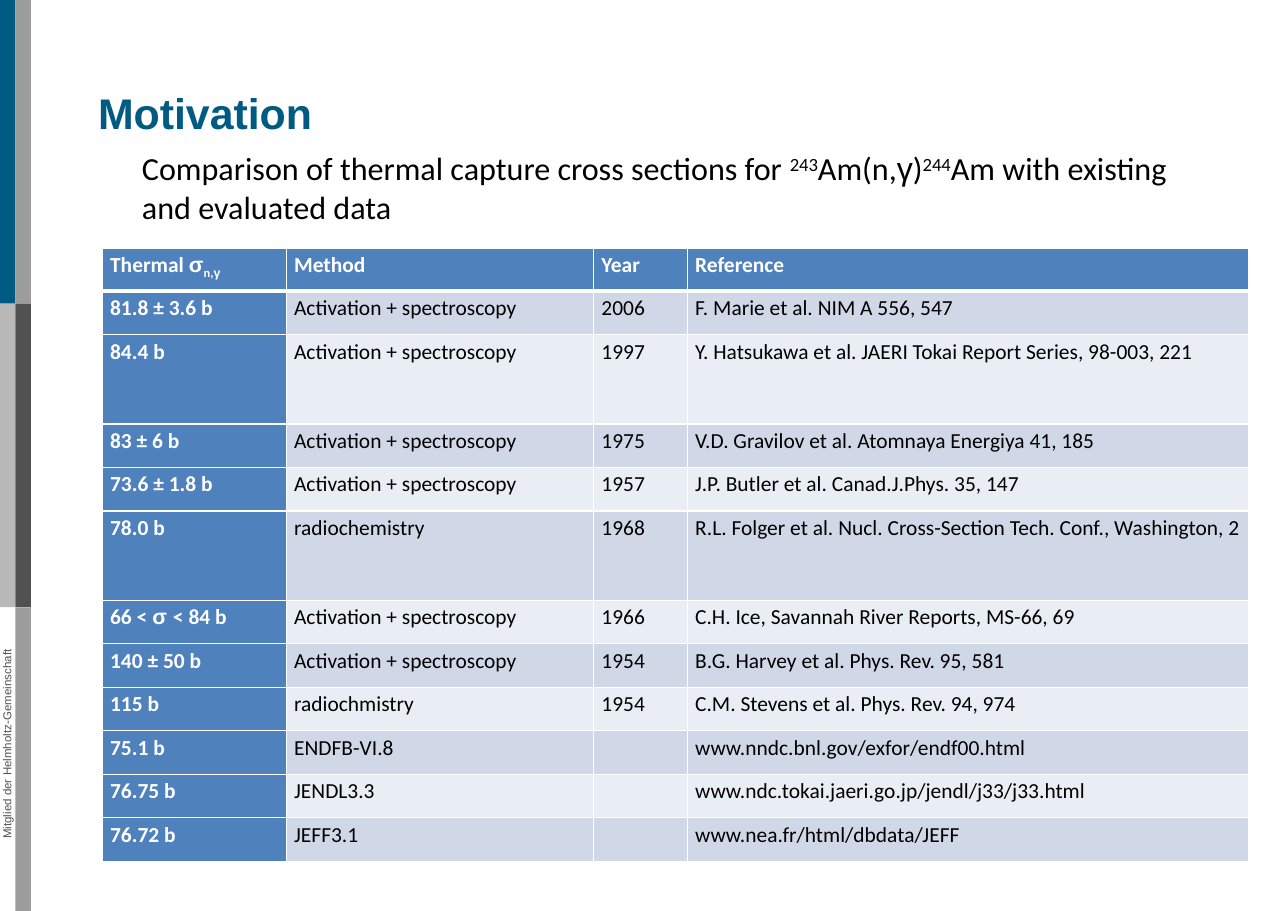
"""Build the Motivation slide comparing thermal capture cross sections."""
from lxml.etree import SubElement
from pptx import Presentation
from pptx.dml.color import RGBColor
from pptx.enum.shapes import MSO_SHAPE
from pptx.enum.text import MSO_ANCHOR, PP_ALIGN
from pptx.oxml.ns import qn
from pptx.util import Inches, Pt

COLORS = {
    "blue": "005B82", "light": "B9B9B9", "middle": "9C9C9C", "dark": "515151",
    "header": "4F81BD", "band": "D0D8E8", "pale": "E9EDF4",
    "white": "FFFFFF", "black": "000000",
}


def write_spans(para, pieces, size, color, bold=False):
    for text, font, baseline in pieces:
        span = para.add_run()
        span.text = text
        span.font.name = font
        span.font.size = Pt(size)
        span.font.bold = bold
        span.font.color.rgb = RGBColor.from_string(COLORS[color])
        if baseline:
            span.font._element.set("baseline", str(baseline * 1000))


def set_border(cell, side, width):
    line = SubElement(cell._tc.get_or_add_tcPr(), qn(f"a:{side}"), w=str(Pt(width)))
    fill = SubElement(line, qn("a:solidFill"))
    SubElement(fill, qn("a:srgbClr"), val=COLORS["white"])


deck = Presentation()
deck.slide_width = Inches(11.69)
deck.slide_height = Inches(8.27)
page = deck.slides.add_slide(deck.slide_layouts[5])

bar_width, bar_height = 0.14, 8.27 / 3
bars = [(0, 0, "blue"), (1, 0, "middle"), (0, 1, "light"), (1, 1, "dark"), (1, 2, "middle")]
for column, row, color in bars:
    bar = page.shapes.add_shape(
        MSO_SHAPE.RECTANGLE, Inches(column * bar_width), Inches(row * bar_height),
        Inches(bar_width), Inches(bar_height))
    bar.shadow.inherit = False
    bar.fill.solid()
    bar.fill.fore_color.rgb = RGBColor.from_string(COLORS[color])
    bar.line.fill.background()

member_box = page.shapes.add_textbox(Inches(-1.18), Inches(6.69), Inches(2.49), Inches(0.13))
member_box.rotation = 270
title = page.shapes.title
title.left, title.top = Inches(0.89), Inches(0.75)
title.width, title.height = Inches(10.38), Inches(0.54)
title.text_frame.vertical_anchor = MSO_ANCHOR.MIDDLE
for box, text, size, color, align in [
    (member_box, "Mitglied der Helmholtz-Gemeinschaft", 7.5, "dark", PP_ALIGN.CENTER),
    (title, "Motivation", 28, "blue", PP_ALIGN.LEFT),
]:
    frame = box.text_frame
    frame.word_wrap = True
    frame.margin_left = frame.margin_right = frame.margin_top = frame.margin_bottom = 0
    para = frame.paragraphs[0]
    para.alignment = align
    write_spans(para, [(text, "Arial", 0)], size, color, box is title)

subtitle = page.shapes.add_textbox(Inches(1.19), Inches(1.3), Inches(9.84), Inches(1.16))
subtitle.text_frame.word_wrap = True
write_spans(subtitle.text_frame.paragraphs[0], [
    ("Comparison of thermal capture cross sections for ", "Calibri", 0),
    ("243", "Calibri", 30),
    ("Am(n,", "Calibri", 0),
    ("γ", "Arial", 0),
    (")", "Calibri", 0),
    ("244", "Calibri", 30),
    ("Am with existing and evaluated data", "Calibri", 0),
], 21, "black")

thermal_label = [("Thermal ", "Calibri", 0), ("σ", "Arial", 0),
                 ("n,", "Calibri", -25), ("γ", "Arial", -25)]
sigma_range = [("66 < ", "Calibri", 0), ("σ ", "Arial", 0), ("< 84 b", "Calibri", 0)]
activation = "Activation + spectroscopy"
rows = [
    (thermal_label, "Method", "Year", "Reference"),
    ("81.8 ± 3.6 b", activation, "2006", "F. Marie et al. NIM A 556, 547"),
    ("84.4 b", activation, "1997",
     "Y. Hatsukawa et al. JAERI Tokai Report Series, 98-003, 221"),
    ("83 ± 6 b", activation, "1975", "V.D. Gravilov et al. Atomnaya Energiya 41, 185"),
    ("73.6 ± 1.8 b", activation, "1957", "J.P. Butler et al. Canad.J.Phys. 35, 147"),
    ("78.0 b", "radiochemistry", "1968",
     "R.L. Folger et al. Nucl. Cross-Section Tech. Conf., Washington, 2"),
    (sigma_range, activation, "1966", "C.H. Ice, Savannah River Reports, MS-66, 69"),
    ("140 ± 50 b", activation, "1954", "B.G. Harvey et al. Phys. Rev. 95, 581"),
    ("115 b", "radiochmistry", "1954", "C.M. Stevens et al. Phys. Rev. 94, 974"),
    ("75.1 b", "ENDFB-VI.8", "", "www.nndc.bnl.gov/exfor/endf00.html"),
    ("76.75 b", "JENDL3.3", "", "www.ndc.tokai.jaeri.go.jp/jendl/j33/j33.html"),
    ("76.72 b", "JEFF3.1", "", "www.nea.fr/html/dbdata/JEFF"),
]
table_height, tall_height, tall_rows = 5.57, 0.81, (2, 5)
row_height = (table_height - tall_height * len(tall_rows)) / (len(rows) - len(tall_rows))
table = page.shapes.add_table(
    len(rows), 4, Inches(0.93), Inches(2.25), Inches(10.39), Inches(table_height)).table
for column, width in zip(table.columns, (1.67, 2.79, 0.85, 5.09)):
    column.width = Inches(width)

for row_index, values in enumerate(rows):
    table.rows[row_index].height = Inches(tall_height if row_index in tall_rows else row_height)
    for column_index, value in enumerate(values):
        cell = table.cell(row_index, column_index)
        cell.margin_left = cell.margin_right = Inches(0.07)
        cell.margin_top = cell.margin_bottom = 0
        set_border(cell, "lnL", 1)
        set_border(cell, "lnR", 1)
        set_border(cell, "lnT", 3 if row_index == 1 else 1)
        set_border(cell, "lnB", 3 if row_index == 0 else 1)
        heading = row_index == 0 or column_index == 0
        shade = "header" if heading else "band" if row_index % 2 else "pale"
        cell.fill.solid()
        cell.fill.fore_color.rgb = RGBColor.from_string(COLORS[shade])
        if value:
            para = cell.text_frame.paragraphs[0]
            para.line_spacing = 1.15
            pieces = [(value, "Calibri", 0)] if isinstance(value, str) else value
            write_spans(para, pieces, 14, "white" if heading else "black", heading)

deck.save("out.pptx")
